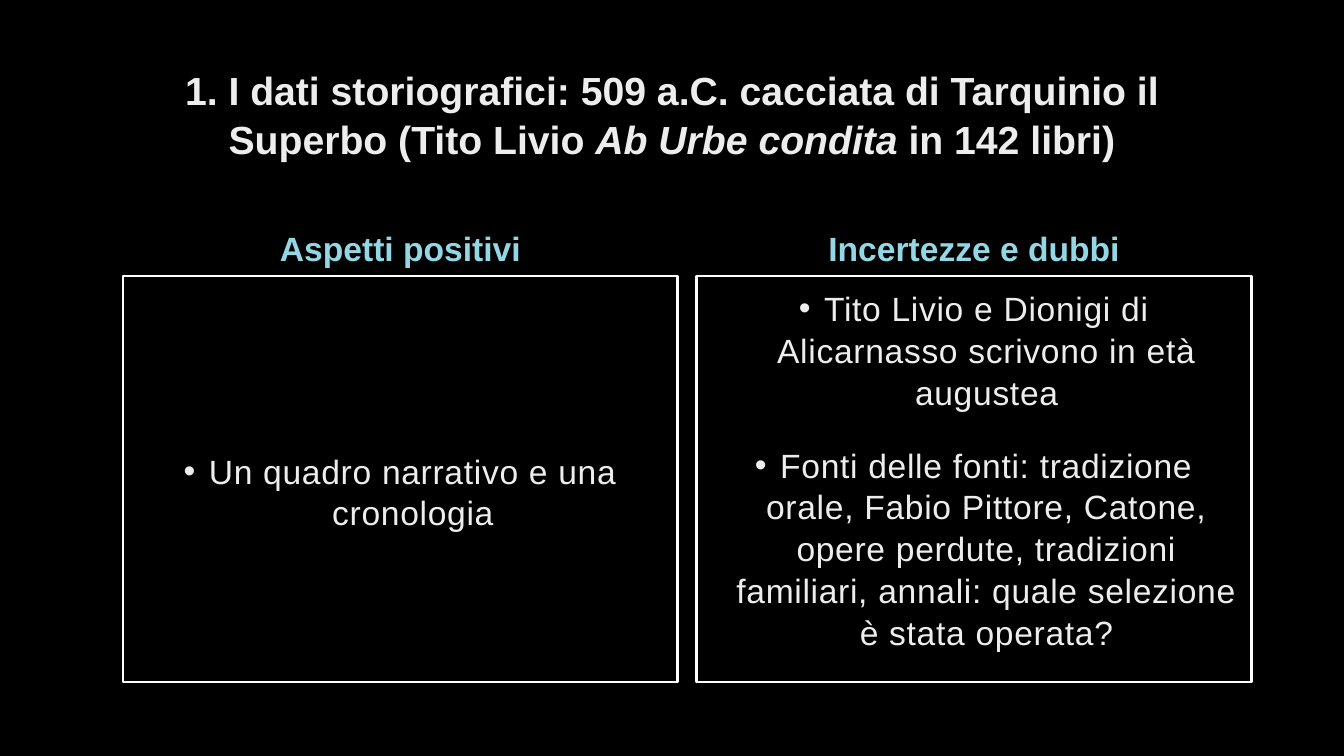
from lxml import etree
from pptx import Presentation
from pptx.dml.color import RGBColor
from pptx.enum.shapes import MSO_SHAPE
from pptx.enum.text import MSO_ANCHOR, PP_ALIGN
from pptx.oxml.ns import qn
from pptx.util import Pt

BLACK = RGBColor(0x00, 0x00, 0x00)
WHITE = RGBColor(0xFF, 0xFF, 0xFF)
LIGHT_GRAY = RGBColor(0xED, 0xED, 0xED)
PALE_BLUE = RGBColor(0x94, 0xD7, 0xE4)

RECTANGLE = MSO_SHAPE.RECTANGLE
CENTER = PP_ALIGN.CENTER
TOP, MIDDLE, BOTTOM = MSO_ANCHOR.TOP, MSO_ANCHOR.MIDDLE, MSO_ANCHOR.BOTTOM

FONT = "Arial"
LINE_SPACING = 1.04
BULLET_INDENT = 18
HEADING_HEIGHT = 65
HEADING_GAP = 2


def add_bullet(paragraph):
    """Give a paragraph a round bullet with a hanging indent."""
    properties = paragraph._p.get_or_add_pPr()
    properties.set("marL", str(Pt(BULLET_INDENT)))
    properties.set("indent", str(-Pt(BULLET_INDENT)))
    etree.SubElement(properties, qn("a:buFont")).set("typeface", FONT)
    etree.SubElement(properties, qn("a:buChar")).set("char", "•")


def write_text(shape, paragraphs, size=24, color=LIGHT_GRAY, bold=False, anchor=MIDDLE,
               bullets=False, tracking=0, space_between=0, inset_x=7.2, inset_top=3.6):
    """Fill a shape with paragraphs, each a list of (text, italic) runs."""
    frame = shape.text_frame
    frame.word_wrap = True
    frame.vertical_anchor = anchor
    frame.margin_left = frame.margin_right = Pt(inset_x)
    frame.margin_top, frame.margin_bottom = Pt(inset_top), Pt(3.6)
    for index, runs in enumerate(paragraphs):
        paragraph = frame.add_paragraph() if index else frame.paragraphs[0]
        paragraph.alignment = CENTER
        paragraph.line_spacing = LINE_SPACING
        if index:
            paragraph.space_before = Pt(space_between)
        if bullets:
            add_bullet(paragraph)
        for text, italic in runs:
            run = paragraph.add_run()
            run.text = text
            run.font.name = FONT
            run.font.size = Pt(size)
            run.font.bold = bold
            run.font.italic = italic
            run.font.color.rgb = color
            if tracking:
                run._r.get_or_add_rPr().set("spc", str(round(tracking * 100)))


def add_title(slide, left, top, width, height):
    """Place the slide title in the given box."""
    title = slide.shapes.add_textbox(Pt(left), Pt(top), Pt(width), Pt(height))
    runs = [
        ("1. I dati storiografici: 509 a.C. cacciata di Tarquinio il Superbo (Tito Livio ", False),
        ("Ab Urbe condita ", True),
        ("in 142 libri)", False),
    ]
    write_text(title, [runs], size=28, bold=True, inset_x=12)


def add_column(slide, left, top, width, height, heading, points, **text_format):
    """Place a heading above a framed list of points in the given box."""
    label = slide.shapes.add_textbox(Pt(left), Pt(top), Pt(width), Pt(HEADING_HEIGHT))
    write_text(label, [[(heading, False)]], color=PALE_BLUE, bold=True, anchor=BOTTOM)

    offset = HEADING_HEIGHT + HEADING_GAP
    panel = slide.shapes.add_shape(
        RECTANGLE, Pt(left), Pt(top + offset), Pt(width), Pt(height - offset))
    panel.shadow.inherit = False
    panel.fill.background()
    panel.line.color.rgb = WHITE
    panel.line.width = Pt(1.75)
    write_text(panel, [[(point, False)] for point in points],
               bullets=True, tracking=0.5, space_between=22, **text_format)


def build_slide(presentation):
    """Build the comparison slide."""
    slide = presentation.slides.add_slide(presentation.slide_layouts[6])
    slide.background.fill.solid()
    slide.background.fill.fore_color.rgb = BLACK
    add_title(slide, 66, 29, 828, 104)
    add_column(slide, 88, 130.3, 396, 357, "Aspetti positivi",
               ["Un quadro narrativo e una cronologia"],
               anchor=MIDDLE, inset_top=20)
    add_column(slide, 497.5, 130.3, 396.5, 357, "Incertezze e dubbi",
               ["Tito Livio e Dionigi di Alicarnasso scrivono in età augustea",
                "Fonti delle fonti: tradizione orale, Fabio Pittore, Catone, opere perdute, "
                "tradizioni familiari, annali: quale selezione è stata operata?"],
               anchor=TOP, inset_top=7.2)


def main():
    """Create and save the presentation."""
    presentation = Presentation()
    presentation.slide_width, presentation.slide_height = Pt(960), Pt(540)
    build_slide(presentation)
    presentation.save("out.pptx")


if __name__ == "__main__":
    main()
